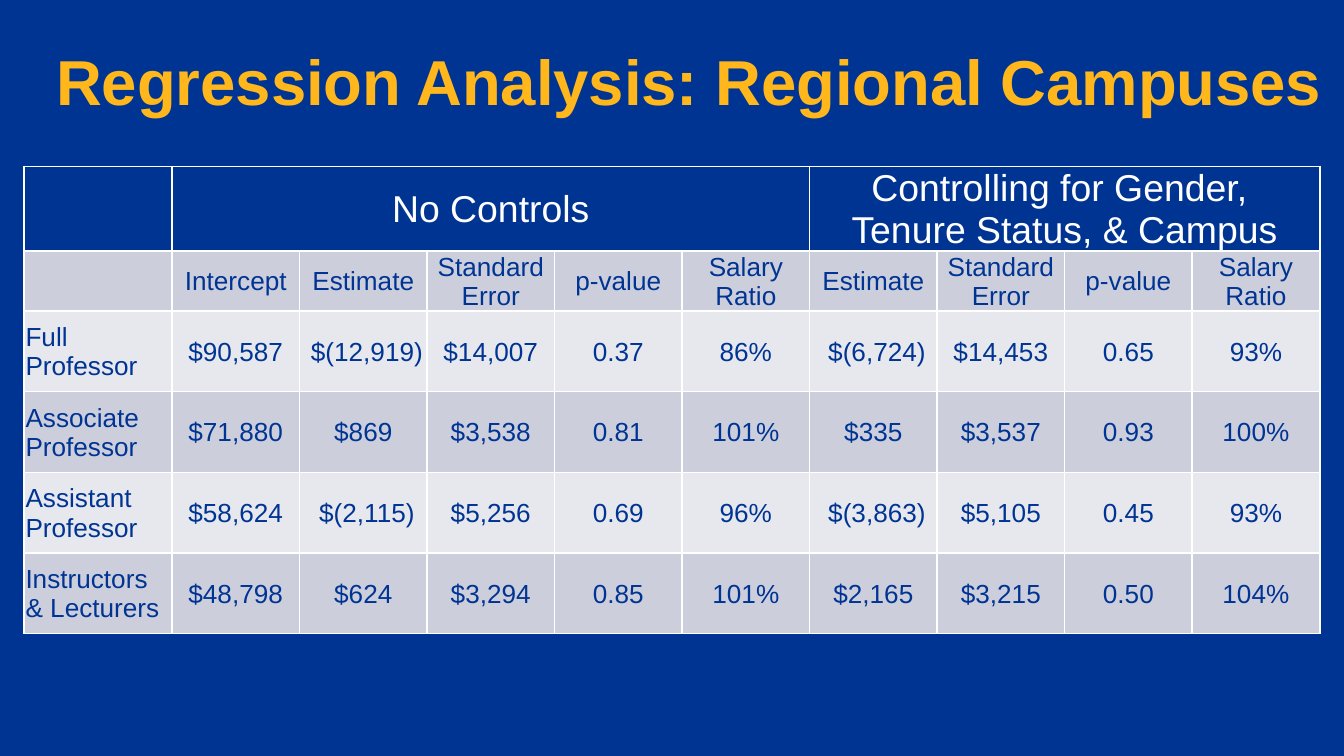
"""Build the regression analysis slide for the regional campuses."""
from typing import Any, NamedTuple

from lxml import etree
from pptx import Presentation
from pptx import util as u
from pptx.dml.color import RGBColor
from pptx.enum import text
from pptx.oxml.ns import qn

WIDE = 10
HIGH = WIDE * 9 / 16
NAVY, GOLD, WHITE, MIST, PALE = "003493", "FFB71B", "FFFFFF", "CCCEDC", "E7E8EE"
SPAN, FIRST = 9.64, 1.1
COLS = [FIRST] + [(SPAN - FIRST) / 9] * 9
ROWS = [0.24, 0.41] + [0.6] * 4


class Look(NamedTuple):
    size: int
    ink: str
    bold: bool = False


class Group(NamedTuple):
    title: str
    first: int
    last: int


class Rank(NamedTuple):
    name: str
    values: str


HEAD, BODY, TITLE = Look(20, WHITE), Look(14, NAVY), Look(34, GOLD, True)
TESTS = ["Estimate", "Standard Error", "p-value", "Salary Ratio"]
GROUPS = [
    Group("No Controls", 1, 5),
    Group("Controlling for Gender, \nTenure Status, & Campus", 6, 9),
]
RANKS = [
    Rank("Full Professor", "$90,587 $(12,919) $14,007 0.37 86% $(6,724) $14,453 0.65 93%"),
    Rank("Associate Professor", "$71,880 $869 $3,538 0.81 101% $335 $3,537 0.93 100%"),
    Rank("Assistant Professor", "$58,624 $(2,115) $5,256 0.69 96% $(3,863) $5,105 0.45 93%"),
    Rank("Instructors & Lecturers", "$48,798 $624 $3,294 0.85 101% $2,165 $3,215 0.50 104%"),
]


def tint(code: str) -> RGBColor:
    """Turn a hex string into a colour."""
    return RGBColor.from_string(code)


def paint(fill: Any, code: str) -> None:
    """Fill a background or cell with one colour."""
    fill.solid()
    fill.fore_color.rgb = tint(code)


def style(frame: Any, look: Look, align: Any) -> None:
    """Format every run of a text frame."""
    for para in frame.paragraphs:
        para.alignment = align
        for run in para.runs:
            run.font.name, run.font.size = "Arial", u.Pt(look.size)
            run.font.bold, run.font.color.rgb = look.bold, tint(look.ink)


def rule(cell: Any) -> None:
    """Draw thin white borders around a cell."""
    props = cell._tc.get_or_add_tcPr()
    for spot, side in enumerate(("lnL", "lnR", "lnT", "lnB")):
        line = etree.Element(qn(f"a:{side}"), w=str(u.Pt(1)))
        fill = etree.SubElement(line, qn("a:solidFill"))
        etree.SubElement(fill, qn("a:srgbClr"), val=WHITE)
        props.insert(spot, line)


def write(cell: Any, words: str, look: Look, align: Any) -> None:
    """Put formatted words in a cell with narrow margins."""
    cell.text_frame.text = words
    cell.vertical_anchor = text.MSO_ANCHOR.MIDDLE
    cell.margin_left = cell.margin_right = cell.margin_top = u.Inches(0.01)
    cell.margin_bottom = 0
    style(cell.text_frame, look, align)


def money(value: str) -> str:
    """Pad a dollar amount in accounting style."""
    if not value.startswith("$"):
        return value
    return f" {value}" if value.endswith(")") else f" {value} "


def grid(slide: Any) -> None:
    """Add the regression table."""
    edge = (WIDE - SPAN) / 2
    frame = slide.shapes.add_table(
        len(ROWS), len(COLS), u.Inches(edge), u.Inches(HIGH * 0.22),
        u.Inches(SPAN), u.Inches(sum(ROWS)))
    table = frame.table
    table.first_row = table.horz_banding = False
    for col, width in zip(table.columns, COLS):
        col.width = u.Inches(width)
    for row, height in zip(table.rows, ROWS):
        row.height = u.Inches(height)
    for r in range(len(ROWS)):
        for c in range(len(COLS)):
            cell = table.cell(r, c)
            paint(cell.fill, NAVY if r == 0 else MIST if r % 2 else PALE)
            rule(cell)
    mid, left = text.PP_ALIGN.CENTER, text.PP_ALIGN.LEFT
    for group in GROUPS:
        cell = table.cell(0, group.first)
        cell.merge(table.cell(0, group.last))
        write(cell, group.title, HEAD, mid)
    for c, label in enumerate(["Intercept"] + TESTS * 2, 1):
        write(table.cell(1, c), label, BODY, mid)
    for r, rank in enumerate(RANKS, 2):
        write(table.cell(r, 0), rank.name, BODY, left)
        for c, value in enumerate(rank.values.split(), 1):
            write(table.cell(r, c), money(value), BODY, mid)


def head(slide: Any, words: str) -> None:
    """Add the slide title."""
    left = WIDE * 0.032
    box = slide.shapes.add_textbox(
        u.Inches(left), u.Inches(0.33), u.Inches(WIDE - left), u.Inches(0.69))
    frame = box.text_frame
    frame.word_wrap = True
    frame.vertical_anchor = text.MSO_ANCHOR.MIDDLE
    frame.margin_bottom = u.Inches(0.14)
    frame.text = words
    frame.paragraphs[0].line_spacing = 0.9
    style(frame, TITLE, text.PP_ALIGN.LEFT)


def main() -> None:
    """Build and save the deck."""
    deck = Presentation()
    deck.slide_width, deck.slide_height = u.Inches(WIDE), u.Inches(HIGH)
    slide = deck.slides.add_slide(deck.slide_layouts[6])
    paint(slide.background.fill, NAVY)
    grid(slide)
    head(slide, "Regression Analysis: Regional Campuses")
    deck.save("out.pptx")


if __name__ == "__main__":
    main()
